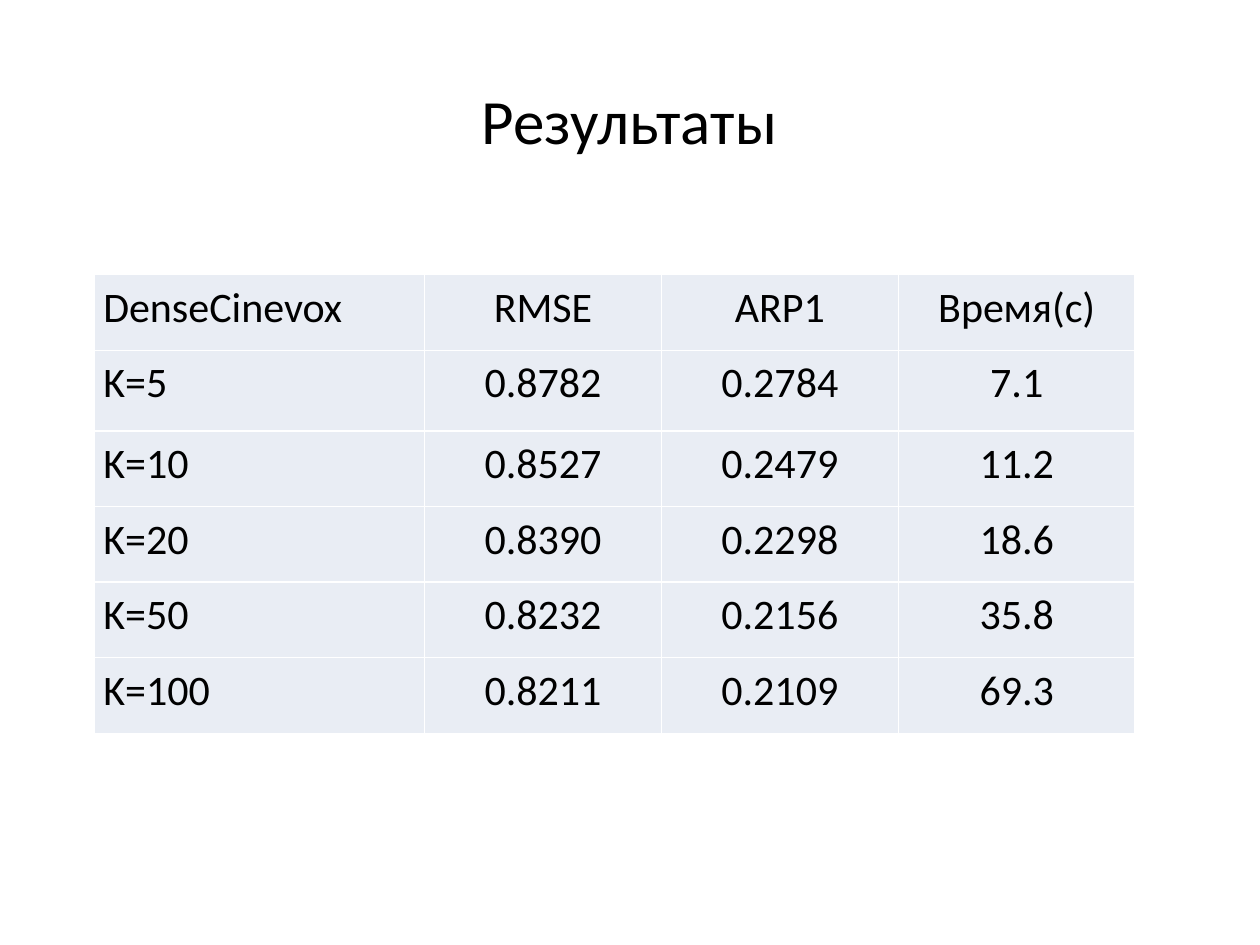
from pptx import Presentation
from pptx.dml.color import RGBColor
from pptx.enum.text import MSO_ANCHOR, PP_ALIGN
from pptx.util import Inches, Pt

TITLE = "Результаты"
ROWS = [
    ("DenseCinevox", "RMSE", "ARP1", "Время(с)"),
    ("K=5", "0.8782", "0.2784", "7.1"),
    ("K=10", "0.8527", "0.2479", "11.2"),
    ("K=20", "0.8390", "0.2298", "18.6"),
    ("K=50", "0.8232", "0.2156", "35.8"),
    ("K=100", "0.8211", "0.2109", "69.3"),
]
WIDTHS = [2.62] + [1.88] * 3
HEIGHTS = [0.6, 0.64] + [0.6] * 4

BLACK = RGBColor(0x00, 0x00, 0x00)
PALE = RGBColor(0xE9, 0xED, 0xF4)
CELL = {
    "margin_left": Inches(0.07),
    "margin_right": Inches(0.07),
    "margin_top": 0,
    "margin_bottom": 0,
    "vertical_anchor": MSO_ANCHOR.TOP,
}


def style(par, size, align):
    par.alignment = align
    font = par.runs[0].font
    font.name, font.size = "Calibri", Pt(size)
    font.color.rgb = BLACK


def add_title(slide):
    title = slide.shapes.title
    title.left, title.top = Inches(0.43), Inches(0.44)
    title.width, title.height = Inches(9.13), Inches(1.02)
    title.text_frame.text = TITLE
    title.text_frame.vertical_anchor = MSO_ANCHOR.MIDDLE
    style(title.text_frame.paragraphs[0], 36, PP_ALIGN.CENTER)


def add_results(slide):
    table = slide.shapes.add_table(
        len(ROWS), len(WIDTHS), Inches(0.75), Inches(2.18),
        Inches(sum(WIDTHS)), Inches(sum(HEIGHTS))).table
    # Without header and bands the table style draws even white rules.
    table.first_row = table.horz_banding = False
    for col, width in zip(table.columns, WIDTHS):
        col.width = Inches(width)
    for row, height, texts in zip(table.rows, HEIGHTS, ROWS):
        row.height = Inches(height)
        for i, (cell, text) in enumerate(zip(row.cells, texts)):
            cell.text = text
            cell.fill.solid()
            cell.fill.fore_color.rgb = PALE
            for name, value in CELL.items():
                setattr(cell, name, value)
            par = cell.text_frame.paragraphs[0]
            par.line_spacing = 1.15
            style(par, 24, PP_ALIGN.CENTER if i else PP_ALIGN.JUSTIFY)


def main():
    deck = Presentation()
    deck.slide_width, deck.slide_height = Inches(10), Inches(7.5)
    slide = deck.slides.add_slide(deck.slide_layouts[5])
    add_title(slide)
    add_results(slide)
    deck.save("out.pptx")


if __name__ == "__main__":
    main()
